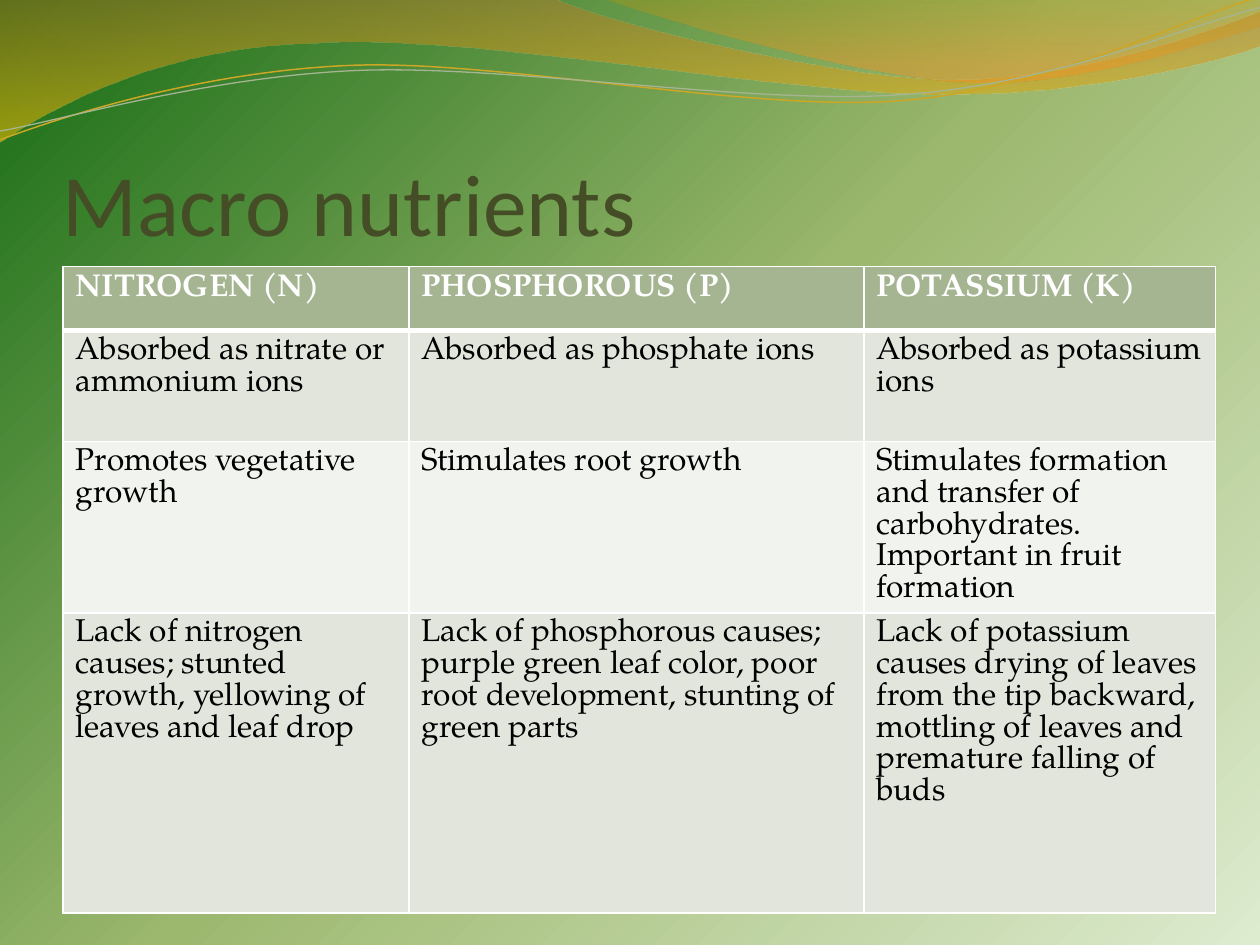
from math import cos, radians, sin

from pptx import Presentation
from pptx.dml.color import RGBColor
from pptx.enum.text import MSO_ANCHOR
from pptx.oxml import parse_xml
from pptx.oxml.ns import nsdecls
from pptx.util import Pt

BOTTOM = MSO_ANCHOR.BOTTOM
WHITE = RGBColor(0xFF, 0xFF, 0xFF)
BLACK = RGBColor(0, 0, 0)
OLIVE = RGBColor(0x44, 0x4D, 0x26)
SAGE = RGBColor(0xA5, 0xB5, 0x92)
PALE = RGBColor(0xE1, 0xE5, 0xDC)
MIST = RGBColor(0xF0, 0xF3, 0xEE)
GOLD = RGBColor(0xCC, 0xA6, 0x24)
BROWN = RGBColor(0xC0, 0x7A, 0x28)
YELLOW = RGBColor(0xF7, 0xBF, 0x00)
MUSTARD = RGBColor(0xC0, 0x97, 0x09)
ORANGE = RGBColor(0xF5, 0x93, 0x20)
LIGHT = RGBColor(0xDD, 0xEB, 0xCF)
LEAF = RGBColor(0x9C, 0xB8, 0x6E)
FOREST = RGBColor(0x15, 0x6B, 0x13)

SANS = "Calibri"
SERIF = "TeX Gyre Pagella"
TILT = -2.7

BANDS = [
    ([[(0, 0)], [(316.8, -0.7)],
      [(342.7, 12.2), (478.1, 45.4), (545.8, 45.4)],
      [(614.2, 45.4), (689.8, 18.7), (720, 6.5)], [(720.7, 25.9)],
      [(707.8, 31.7), (626.4, 54.7), (537.1, 54)],
      [(447.8, 54), (275, 20.2), (185, 24.5)],
      [(92.9, 25.9), (33.1, 59.8), (-0.7, 81.4)]],
     [(0, BROWN, 45), (100, YELLOW, 55)]),
    ([[(344.9, -0.7)],
      [(366.5, 7.9), (491, 44.6), (553.7, 46.8)],
      [(616.3, 49.7), (691.9, 23), (720, 15.1)], [(720, 0)]],
     [(0, MUSTARD, 30), (80, ORANGE, 45)]),
]
STRANDS = [
    ([[(0, 79.9)],
      [(34.6, 67), (113.8, 41), (199.4, 37.4)],
      [(284.4, 33.8), (427, 64.1), (513.4, 57.6)],
      [(599.8, 51.1), (675.4, 10.8), (718.6, -1.4)]],
     (359.3, 41.4), GOLD, 0.85),
    ([[(0, 74.9)],
      [(33.8, 69.1), (118.1, 43.9), (203.8, 40.3)],
      [(290.2, 36.7), (429.8, 60.5), (516.2, 54)],
      [(601.9, 48.2), (677.5, 15.1), (720, 4.3)]],
     (359.6, 42.5), SAGE, 0.75),
]

ROWS = [
    ["NITROGEN (N)", "PHOSPHOROUS (P)", "POTASSIUM (K)"],
    ["Absorbed as nitrate or ammonium ions",
     "Absorbed as phosphate ions",
     "Absorbed as potassium ions"],
    ["Promotes vegetative growth",
     "Stimulates root growth",
     "Stimulates formation and transfer of carbohydrates. "
     "Important in fruit formation"],
    ["Lack of nitrogen causes; stunted growth, yellowing of leaves "
     "and leaf drop",
     "Lack of phosphorous causes; purple green leaf color, poor root "
     "development, stunting of green parts",
     "Lack of potassium causes drying of leaves from the tip backward, "
     "mottling of leaves and premature falling of buds"],
]
WIDTHS = [197.7, 260, 200.8]
HEIGHTS = [36.5, 63.5, 97.7, 171.5]
FILLS = [SAGE, PALE, MIST, PALE]
PITCH = 18.1


def grad(stops, aim):
    marks = "".join(
        f'<a:gs pos="{pos * 1000}"><a:srgbClr val="{color}">'
        f'<a:alpha val="{alpha * 1000}"/></a:srgbClr></a:gs>'
        for pos, color, alpha in stops)
    return (f'<a:gradFill {nsdecls("a")} rotWithShape="1">'
            f'<a:gsLst>{marks}</a:gsLst>{aim}</a:gradFill>')


def add_back(slide):
    aim = ('<a:path path="circle">'
           '<a:fillToRect l="100000" t="100000"/></a:path>')
    fill = grad([(0, LIGHT, 100), (50, LEAF, 100), (100, FOREST, 100)], aim)
    slide._element.cSld.insert(0, parse_xml(
        f'<p:bg {nsdecls("p", "a")}><p:bgPr>{fill}'
        '<a:effectLst/></p:bgPr></p:bg>'))


def turn(parts, mid, angle):
    c, s = cos(radians(angle)), sin(radians(angle))
    return [[(mid[0] + (x - mid[0]) * c - (y - mid[1]) * s,
              mid[1] + (x - mid[0]) * s + (y - mid[1]) * c)
             for x, y in part] for part in parts]


def add_path(slide, parts, left, top, close):
    parts = [[(Pt(left + x), Pt(top + y)) for x, y in part]
             for part in parts]
    ends = [part[-1] for part in parts]
    pen = slide.shapes.build_freeform(*ends[0], scale=1.0)
    pen.add_line_segments(ends[1:], close=close)
    shape = pen.convert_to_shape()
    shape.shadow.inherit = False
    lines = list(shape._element.iterfind(".//{*}lnTo"))
    for line, part in zip(lines, parts[1:]):
        if len(part) == 3:
            dots = "".join(
                f'<a:pt x="{x - shape.left}" y="{y - shape.top}"/>'
                for x, y in part)
            line.getparent().replace(line, parse_xml(
                f'<a:cubicBezTo {nsdecls("a")}>{dots}</a:cubicBezTo>'))
    return shape


def add_waves(slide, left, top):
    for parts, stops in BANDS:
        band = add_path(slide, parts, left, top, True)
        band.line.fill.background()
        fill = parse_xml(grad(stops, '<a:lin ang="5400000" scaled="0"/>'))
        band._element.spPr.find("{*}custGeom").addnext(fill)
    for parts, mid, color, width in STRANDS:
        strand = add_path(slide, turn(parts, mid, -TILT), left, top, False)
        strand.rotation = TILT
        strand.fill.background()
        strand.line.color.rgb = color
        strand.line.width = Pt(width)


def style(para, font, size, color, bold=False):
    for run in para.runs:
        run.font.name = font
        run.font.size = Pt(size)
        run.font.color.rgb = color
        run.font.bold = bold


def add_title(slide, left, top, width, height):
    box = slide.shapes.add_textbox(Pt(left), Pt(top), Pt(width), Pt(height))
    frame = box.text_frame
    frame.word_wrap = True
    frame.vertical_anchor = BOTTOM
    frame.margin_left = frame.margin_right = frame.margin_bottom = 0
    frame.margin_top = Pt(3.6)
    frame.text = "Macro nutrients"
    style(frame.paragraphs[0], SANS, 50, OLIVE)


def add_edges(cell, above, below):
    props = cell._tc.get_or_add_tcPr()
    sides = [("L", 1), ("R", 1), ("T", above), ("B", below)]
    for spot, (side, width) in enumerate(sides):
        props.insert(spot, parse_xml(
            f'<a:ln{side} {nsdecls("a")} w="{Pt(width)}"><a:solidFill>'
            f'<a:srgbClr val="{WHITE}"/></a:solidFill></a:ln{side}>'))


def add_grid(slide, left, top):
    table = slide.shapes.add_table(
        len(ROWS), len(WIDTHS), Pt(left), Pt(top),
        Pt(sum(WIDTHS)), Pt(sum(HEIGHTS))).table
    for col, width in zip(table.columns, WIDTHS):
        col.width = Pt(width)
    for r, words in enumerate(ROWS):
        head = r == 0
        table.rows[r].height = Pt(HEIGHTS[r])
        for c, word in enumerate(words):
            cell = table.cell(r, c)
            cell.text_frame.text = word
            para = cell.text_frame.paragraphs[0]
            para.line_spacing = Pt(PITCH)
            style(para, SERIF, 18, WHITE if head else BLACK, head)
            cell.fill.solid()
            cell.fill.fore_color.rgb = FILLS[r]
            add_edges(cell, 3 if r == 1 else 1, 3 if head else 1)


def main():
    deck = Presentation()
    deck.slide_width, deck.slide_height = Pt(720), Pt(540)
    slide = deck.slides.add_slide(deck.slide_layouts[6])
    add_back(slide)
    add_waves(slide, 0, 0)
    add_title(slide, 36, 55.4, 648, 90)
    add_grid(slide, 36, 152.4)
    deck.save("out.pptx")


if __name__ == "__main__":
    main()
